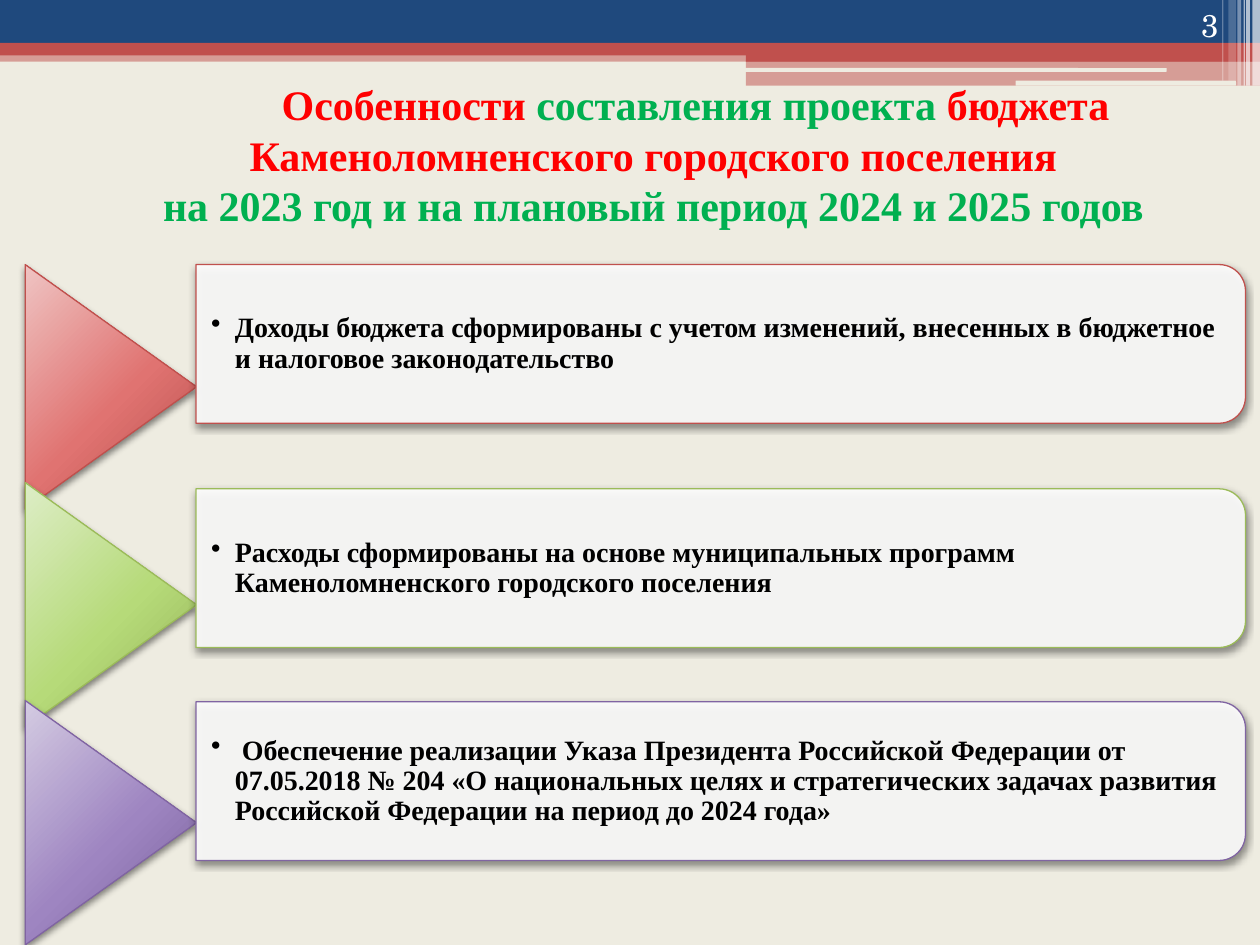
"""Build the slide on how the settlement's draft budget was prepared."""
from dataclasses import dataclass

from lxml.etree import SubElement
from pptx import Presentation
from pptx.dml.color import RGBColor
from pptx.enum.shapes import MSO_SHAPE as Shape
from pptx.enum.text import MSO_ANCHOR as Anchor, MSO_AUTO_SIZE as AutoSize, PP_ALIGN as Align
from pptx.oxml import parse_xml
from pptx.oxml.ns import nsdecls, qn
from pptx.util import Inches, Pt

COLORS = {
    "paper": "EEECE1", "navy": "1F497D", "brick": "C0504D", "white": "FFFFFF",
    "black": "000000", "red": "FF0000", "green": "00B050",
}
SERIF = "Times New Roman"
CELL = Inches(0.1)
TRIANGLE_LEFT, TRIANGLE_TOP, TRIANGLE_STEP = 2, 21, 17.3
TRIANGLE_WIDTH, TRIANGLE_HEIGHT = 13.6, 19.4
PANEL_LEFT, PANEL_WIDTH, PANEL_HEIGHT = 15.55, 83.3, 12.6


@dataclass(frozen=True)
class Area:
    """A rectangle in columns and rows of a tenth of an inch."""
    column: float
    row: float
    columns: float
    rows: float

    def lengths(self) -> list[int]:
        return [round(value * CELL) for value in (self.column, self.row, self.columns, self.rows)]

    def before_quarter_turn(self) -> "Area":
        shift = (self.columns - self.rows) / 2
        return Area(self.column + shift, self.row - shift, self.rows, self.columns)


@dataclass(frozen=True)
class Bar:
    area: Area
    color: str
    opacity: int = 100
    kind: Shape = Shape.RECTANGLE


@dataclass(frozen=True)
class Feature:
    text: str
    panel_row: float
    outline: str
    gradient: tuple[str, str, str]


BARS = [
    Bar(Area(0, 4, 100, 0.9), "brick", 50),
    Bar(Area(0, 0, 100, 3.4), "navy"),
    Bar(Area(0, 3.4, 100, 1), "brick"),
    Bar(Area(59.2, 3.9, 40.8, 1), "brick"),
    Bar(Area(59.2, 4.8, 40.8, 2), "brick", 50),
    Bar(Area(59.1, 5.4, 33.5, 0.3), "paper", kind=Shape.ROUNDED_RECTANGLE),
    Bar(Area(80.6, 6.4, 17.5, 0.4), "paper", kind=Shape.ROUNDED_RECTANGLE),
] + [
    Bar(Area(column, 0, columns, rows), "white", opacity)
    for column, columns, rows, opacity in (
        (99.4, 0.6, 6.8, 65), (98.9, 0.3, 6.8, 65), (98.7, 0.1, 6.8, 60),
        (98.2, 0.3, 6.8, 40), (97.5, 0.6, 6.4, 20), (97, 0.1, 6.4, 30),
    )
]
TITLE_LINES = [
    [("Особенности", "red"), (" составления проекта ", "green"),
     ("бюджета Каменоломненского городского поселения", "red")],
    [("на 2023 год и на плановый период 2024 и 2025 годов", "green")],
]
FEATURES = [
    Feature("Доходы бюджета сформированы с учетом изменений, внесенных в бюджетное "
            "и налоговое законодательство",
            21, "C0504D", ("EFC4C3", "E07371", "B34B48")),
    Feature("Расходы сформированы на основе муниципальных программ "
            "Каменоломненского городского поселения",
            38.8, "9BBB59", ("DDEDC6", "B6DA79", "90AE53")),
    Feature(" Обеспечение реализации Указа Президента Российской Федерации от 07.05.2018 "
            "№ 204 «О национальных целях и стратегических задачах развития "
            "Российской Федерации на период до 2024 года»",
            55.7, "8064A2", ("D4CBE2", "9E85C1", "775D97")),
]


def rgb(name: str) -> RGBColor:
    return RGBColor.from_string(COLORS[name])


def add_filled(slide, kind: Shape, area: Area, color: str, opacity: int = 100):
    shape = slide.shapes.add_shape(kind, *area.lengths())
    shape.shadow.inherit = False
    shape.fill.solid()
    shape.fill.fore_color.rgb = rgb(color)
    shape.line.fill.background()
    if opacity < 100:
        tint = shape.fill._xPr.find(".//" + qn("a:srgbClr"))
        SubElement(tint, qn("a:alpha"), val=str(opacity * 1000))
    return shape


def add_turned(slide, kind: Shape, area: Area, outline: str, opacity: int = 100):
    """Add an outlined, shadowed shape turned a quarter clockwise to fill the area."""
    shape = add_filled(slide, kind, area.before_quarter_turn(), "white", opacity)
    shape.rotation = 90
    shape.line.color.rgb = RGBColor.from_string(outline)
    shape.line.width = Pt(0.75)
    shape._element.spPr.find(qn("a:effectLst")).append(parse_xml(
        f'<a:outerShdw {nsdecls("a")} blurRad="{Pt(4)}" dist="{Pt(2)}" dir="5400000" '
        'rotWithShape="0"><a:srgbClr val="000000"><a:alpha val="45000"/></a:srgbClr>'
        '</a:outerShdw>'))
    return shape


def set_radial_gradient(shape, colors: tuple[str, str, str]) -> None:
    stops = "".join(
        f'<a:gs pos="{position}"><a:srgbClr val="{color}"/></a:gs>'
        for position, color in zip((0, 55000, 100000), colors))
    properties = shape._element.spPr
    properties.replace(properties.find(qn("a:solidFill")), parse_xml(
        f'<a:gradFill {nsdecls("a")} rotWithShape="1"><a:gsLst>{stops}</a:gsLst>'
        '<a:path path="circle"><a:fillToRect l="-40000" t="-90000" r="140000" b="190000"/>'
        '</a:path></a:gradFill>'))


def add_text(slide, area: Area, text: str, anchor: Anchor):
    frame = slide.shapes.add_textbox(*area.lengths()).text_frame
    frame.word_wrap = True
    frame.vertical_anchor = anchor
    paragraph = frame.paragraphs[0]
    paragraph.text = text
    return frame, paragraph


def set_font(paragraph, name: str, size: float, color: str, bold: bool = False) -> None:
    font = paragraph.font
    font.name, font.size, font.bold = name, Pt(size), bold
    font.color.rgb = rgb(color)


def add_feature(slide, index: int, feature: Feature) -> None:
    triangle = add_turned(
        slide, Shape.ISOSCELES_TRIANGLE,
        Area(TRIANGLE_LEFT, TRIANGLE_TOP + index * TRIANGLE_STEP, TRIANGLE_WIDTH, TRIANGLE_HEIGHT),
        feature.outline)
    set_radial_gradient(triangle, feature.gradient)
    panel = Area(PANEL_LEFT, feature.panel_row, PANEL_WIDTH, PANEL_HEIGHT)
    add_turned(slide, Shape.ROUND_2_SAME_RECTANGLE, panel, feature.outline, 90)
    text_area = Area(panel.column, panel.row + 0.6, panel.columns - 0.6, panel.rows - 1.2)
    frame, paragraph = add_text(slide, text_area, feature.text, Anchor.MIDDLE)
    frame.margin_left = Inches(0.12)
    frame.margin_top = frame.margin_right = frame.margin_bottom = Inches(0.01)
    paragraph.line_spacing = 0.9
    properties = paragraph._p.get_or_add_pPr()
    properties.set("marL", str(Inches(0.19)))
    properties.set("indent", str(-Inches(0.19)))
    SubElement(properties, qn("a:buChar"), char="•")
    set_font(paragraph, SERIF, 16, "black", bold=True)


def format_title(title) -> None:
    title.left, title.top, title.width, title.height = Area(6, 9.2, 91.7, 10.1).lengths()
    frame = title.text_frame
    frame.word_wrap = True
    frame.auto_size = AutoSize.NONE
    frame.vertical_anchor = Anchor.MIDDLE
    frame.margin_bottom = Inches(0.45)
    paragraph = frame.paragraphs[0]
    paragraph.alignment = Align.CENTER
    paragraph._p.get_or_add_pPr().set("indent", str(Inches(0.67)))
    for number, line in enumerate(TITLE_LINES):
        if number:
            paragraph.add_line_break()
        for text, color in line:
            run = paragraph.add_run()
            run.text = text
            run.font.color.rgb = rgb(color)
    set_font(paragraph, SERIF, 24, "red", bold=True)


def main() -> None:
    presentation = Presentation()
    presentation.slide_width, presentation.slide_height = 100 * CELL, 75 * CELL
    slide = presentation.slides.add_slide(presentation.slide_layouts[5])
    slide.background.fill.solid()
    slide.background.fill.fore_color.rgb = rgb("paper")
    for bar in BARS:
        add_filled(slide, bar.kind, bar.area, bar.color, bar.opacity)
    format_title(slide.shapes.title)
    for index, feature in enumerate(FEATURES):
        add_feature(slide, index, feature)
    _, number = add_text(slide, Area(89.4, 0, 8.3, 4), "3", Anchor.BOTTOM)
    number.alignment = Align.RIGHT
    set_font(number, "TeX Gyre Schola", 18, "white")
    presentation.save("out.pptx")


if __name__ == "__main__":
    main()
